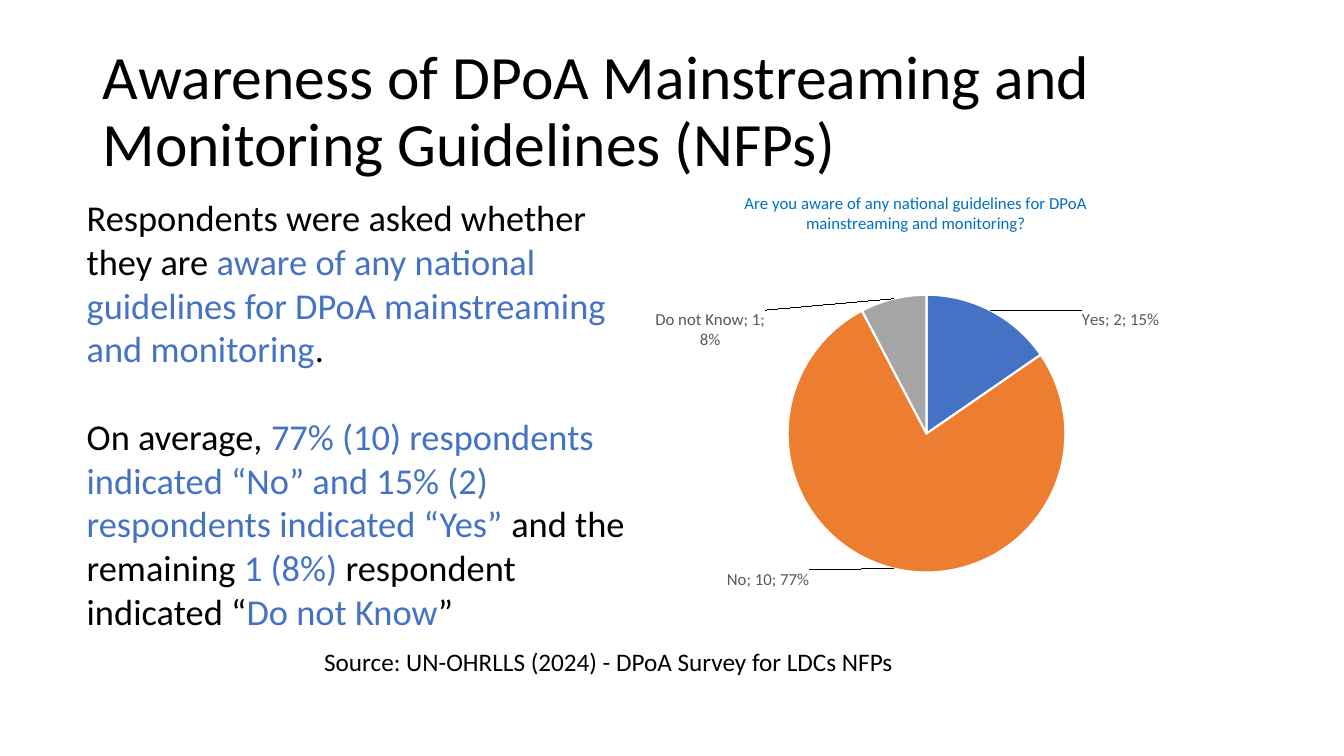
import copy
from typing import NamedTuple

import lxml.etree
import pptx
import pptx.chart.data
import pptx.dml.color
import pptx.enum.chart
import pptx.enum.text
import pptx.oxml
import pptx.oxml.ns
import pptx.util
from pptx.util import Cm

FONT = "Calibri"
BLACK, BLUE, GREY, TITLE_BLUE = "000000", "4472C4", "595959", "0070C0"


class Box(NamedTuple):
    left: float
    top: float
    width: float
    height: float


class Run(NamedTuple):
    text: str
    color: str = BLACK


class Answer(NamedTuple):
    name: str
    count: int
    color: str
    label_dx: float
    label_dy: float


ANSWERS = [
    Answer("Yes", 2, BLUE, 0.16, 0.055),
    Answer("No", 10, "ED7D31", -0.15, -0.01),
    Answer("Do not Know", 1, "A5A5A5", -0.23, 0.13),
]
BODY = [
    [
        Run("Respondents were asked whether they are "),
        Run("aware of any national guidelines for DPoA mainstreaming and monitoring", BLUE),
        Run("."),
    ],
    [
        Run("On average, "),
        Run("77% (10) respondents indicated “No” and 15% (2) respondents indicated “Yes”", BLUE),
        Run(" and the remaining "),
        Run("1 (8%) ", BLUE),
        Run("respondent indicated “"),
        Run("Do not Know", BLUE),
        Run("”"),
    ],
]


def rgb(color: str) -> pptx.dml.color.RGBColor:
    return pptx.dml.color.RGBColor.from_string(color)


def apply(target: object, values: dict) -> None:
    """Set each named attribute of the target."""
    for name, value in values.items():
        setattr(target, name, value)


def style_font(font: object, size: float, color: str) -> None:
    apply(font, {"name": FONT, "size": pptx.util.Pt(size), "bold": False})
    font.color.rgb = rgb(color)


def place(sp: object, box: Box) -> None:
    apply(sp, {name: Cm(value) for name, value in box._asdict().items()})


def fill_text(sp: object, paragraphs: list[list[Run]], size: float,
              frame_format: dict, paragraph_format: dict, gap: float = 0) -> None:
    """Write the runs, with a gap in points before every later paragraph."""
    tf = sp.text_frame
    apply(tf, {"word_wrap": True, "auto_size": pptx.enum.text.MSO_AUTO_SIZE.NONE} | frame_format)
    for i, runs in enumerate(paragraphs):
        p = tf.add_paragraph() if i else tf.paragraphs[0]
        apply(p, {"alignment": pptx.enum.text.PP_ALIGN.LEFT,
                  "space_before": pptx.util.Pt(gap if i else 0)} | paragraph_format)
        for run in runs:
            r = p.add_run()
            r.text = run.text
            style_font(r.font, size, run.color)


def remove_bullets(sp: object) -> None:
    for p in sp.text_frame.paragraphs:
        pPr = p._p.get_or_add_pPr()
        apply_indent = {"marL": "0", "indent": "0"}
        for name, value in apply_indent.items():
            pPr.set(name, value)
        lxml.etree.SubElement(pPr, pptx.oxml.ns.qn("a:buNone"))


def layout_xml(**values: object) -> object:
    """Build a manual chart layout from its settings."""
    parts = "".join(f'<c:{name} val="{value}"/>' for name, value in values.items())
    return pptx.oxml.parse_xml(
        f'<c:layout {pptx.oxml.ns.nsdecls("c")}><c:manualLayout>{parts}</c:manualLayout></c:layout>')


def set_layout(element: object, layout: object, index: int) -> None:
    for old in element.findall(pptx.oxml.ns.qn("c:layout")):
        element.remove(old)
    element.insert(index, layout)


def move_labels(labels: object) -> None:
    """Give every slice its own label, shifted by a share of the chart size."""
    qn = pptx.oxml.ns.qn
    dLbls = labels._element
    separator = lxml.etree.Element(qn("c:separator"))
    separator.text = "; "
    dLbls.find(qn("c:showPercent")).addnext(separator)
    bubble = dLbls.find(qn("c:showBubbleSize"))
    if bubble is not None:
        bubble.addnext(separator)
    shared = [e for e in dLbls if e.tag != qn("c:showLeaderLines")]
    for i, answer in enumerate(ANSWERS):
        dLbl = lxml.etree.Element(qn("c:dLbl"))
        lxml.etree.SubElement(dLbl, qn("c:idx")).set("val", str(i))
        dLbl.append(layout_xml(x=answer.label_dx, y=answer.label_dy))
        dLbl.extend(copy.deepcopy(shared))
        dLbls.insert(i, dLbl)


def add_pie(s: object, box: Box) -> None:
    data = pptx.chart.data.CategoryChartData()
    data.categories = [answer.name for answer in ANSWERS]
    data.add_series("Series 1", [answer.count for answer in ANSWERS])
    chart = s.shapes.add_chart(
        pptx.enum.chart.XL_CHART_TYPE.PIE, *(Cm(v) for v in box), data).chart
    apply(chart, {"has_legend": False, "has_title": True})
    style_font(chart.font, 10, BLACK)

    title = chart.chart_title
    title.include_in_layout = False
    r = title.text_frame.paragraphs[0].add_run()
    r.text = "Are you aware of any national guidelines for DPoA mainstreaming and monitoring?"
    style_font(r.font, 12, TITLE_BLUE)
    set_layout(title._element, layout_xml(xMode="edge", yMode="edge", x=0.16, y=0.035), 1)

    plot = chart.plots[0]
    plot.vary_by_categories = True
    plot_area = plot._element.getparent()
    set_layout(plot_area, layout_xml(layoutTarget="inner", xMode="edge", yMode="edge",
                                     x=0.244, y=0.276, w=0.504, h=0.633), 0)
    series = plot.series[0]
    for i, answer in enumerate(ANSWERS):
        piece = series.points[i].format
        piece.fill.solid()
        piece.fill.fore_color.rgb = rgb(answer.color)
        piece.line.color.rgb = rgb("FFFFFF")
        piece.line.width = pptx.util.Pt(1.5)

    labels = series.data_labels
    apply(labels, {"show_value": True, "show_category_name": True, "show_percentage": True,
                   "position": pptx.enum.chart.XL_LABEL_POSITION.OUTSIDE_END})
    style_font(labels.font, 12, GREY)
    move_labels(labels)


def main() -> None:
    prs = pptx.Presentation()
    apply(prs, {"slide_width": Cm(33.87), "slide_height": Cm(19.05)})
    s = prs.slides.add_slide(prs.slide_layouts[1])

    title, body = s.placeholders
    place(title, Box(2.33, 1.01, 29.21, 3.68))
    fill_text(title, [[Run("Awareness of DPoA Mainstreaming and Monitoring Guidelines (NFPs)")]],
              44, {"vertical_anchor": pptx.enum.text.MSO_ANCHOR.MIDDLE}, {"line_spacing": 0.9})

    add_pie(s, Box(16.46, 4.37, 13.89, 11.07))

    source = s.shapes.add_textbox(Cm(7.92), Cm(16.15), Cm(15.52), Cm(1.02))
    fill_text(source, [[Run("Source: UN-OHRLLS (2024) - DPoA Survey for LDCs NFPs")]], 18, {}, {})

    place(body, Box(1.93, 4.8, 14.53, 11.38))
    fill_text(body, BODY, 26, {"vertical_anchor": pptx.enum.text.MSO_ANCHOR.TOP}, {}, gap=31.5)
    remove_bullets(body)

    prs.save("out.pptx")


if __name__ == "__main__":
    main()
